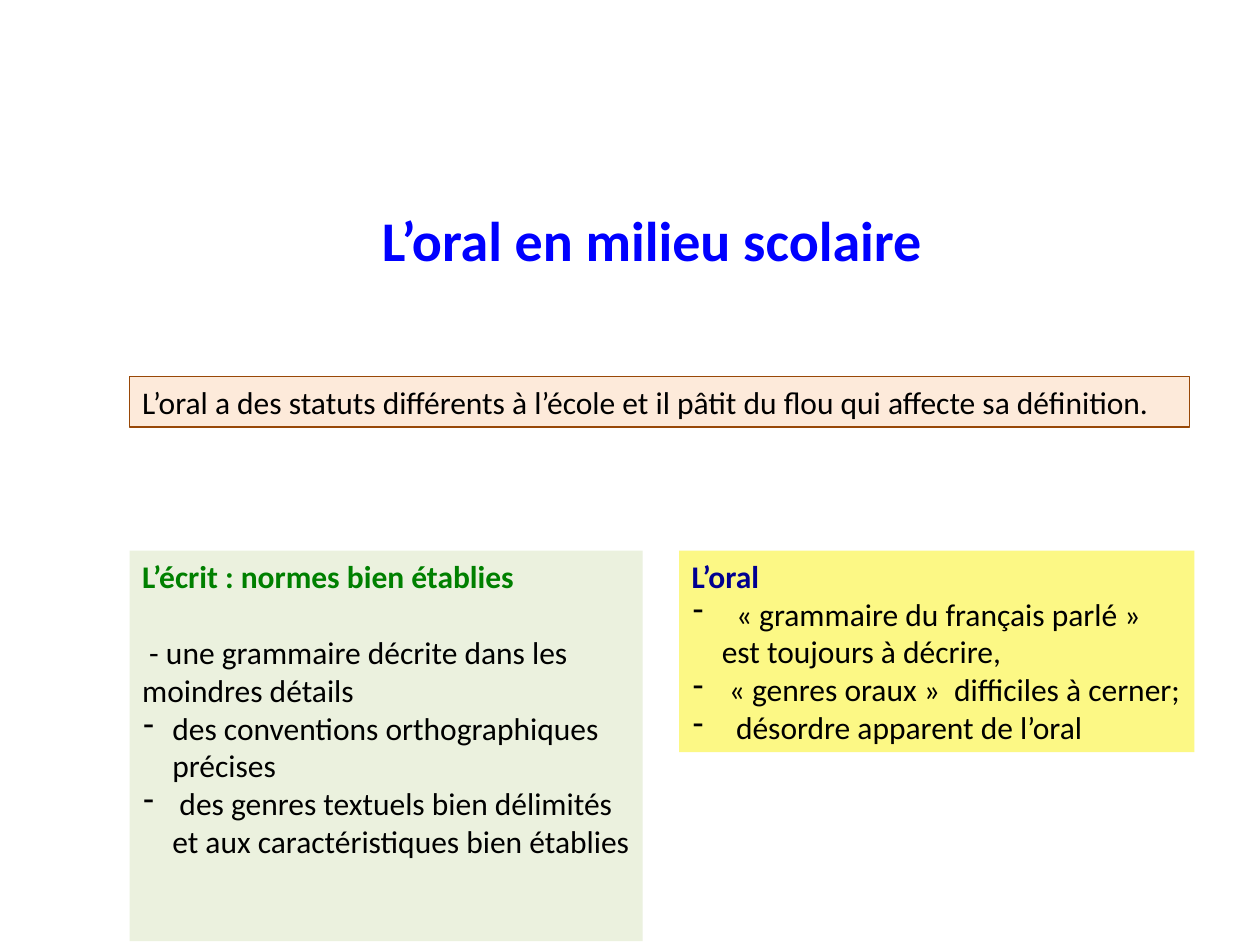
"""Build the slide on the status of spoken French at school."""
from lxml import etree
from pptx import Presentation
from pptx.dml.color import RGBColor
from pptx.enum.shapes import MSO_SHAPE
from pptx.enum.text import MSO_ANCHOR, PP_ALIGN
from pptx.oxml.ns import qn
from pptx.util import Inches, Pt

RECTANGLE = MSO_SHAPE.RECTANGLE
TOP = MSO_ANCHOR.TOP
LEFT, CENTER = PP_ALIGN.LEFT, PP_ALIGN.CENTER

BLACK = RGBColor(0x00, 0x00, 0x00)
BLUE = RGBColor(0x00, 0x00, 0xFF)
NAVY = RGBColor(0x00, 0x00, 0x90)
GREEN = RGBColor(0x00, 0x80, 0x00)
BROWN = RGBColor(0x98, 0x48, 0x07)
PEACH = RGBColor(0xFD, 0xEA, 0xDA)
PALE_GREEN = RGBColor(0xEB, 0xF1, 0xDE)
YELLOW = RGBColor(0xFC, 0xF8, 0x85)

BODY = {"name": "Calibri", "size": Pt(18), "bold": False}
HEADING = {**BODY, "bold": True}
TITLE = {**HEADING, "size": Pt(32)}


def add_dash(paragraph):
    properties = paragraph._p.get_or_add_pPr()
    properties.set("marL", str(Inches(0.24)))
    properties.set("indent", str(Inches(-0.23)))
    color = etree.SubElement(properties, qn("a:buClr"))
    etree.SubElement(color, qn("a:srgbClr"), val=str(BLACK))
    etree.SubElement(properties, qn("a:buChar"), char="-")


def write(frame, lines, align):
    frame.word_wrap = True
    frame.vertical_anchor = TOP
    for index, (text, style, color, dashed, gap) in enumerate(lines):
        paragraph = frame.add_paragraph() if index else frame.paragraphs[0]
        paragraph.alignment = align
        if gap:
            paragraph.space_before = Pt(gap)
        if dashed:
            add_dash(paragraph)
        run = paragraph.add_run()
        run.text = text
        for attribute, value in style.items():
            setattr(run.font, attribute, value)
        run.font.color.rgb = color


presentation = Presentation()
presentation.slide_width = Inches(10)
presentation.slide_height = Inches(7.5)
slide = presentation.slides.add_slide(presentation.slide_layouts[6])

title = slide.shapes.add_textbox(Inches(1.87), Inches(1.58), Inches(6.71), Inches(0.63))
write(title.text_frame, [("L’oral en milieu scolaire ", TITLE, BLUE, False, 0)], CENTER)

statement = [
    ("L’oral a des statuts différents à l’école et il pâtit du flou qui affecte sa définition.",
     BODY, BLACK, False, 0),
]
written = [
    ("L’écrit : normes bien établies", HEADING, GREEN, False, 0),
    (" - une grammaire décrite dans les moindres détails", BODY, BLACK, False, 22),
    ("des conventions orthographiques précises", BODY, BLACK, True, 0),
    (" des genres textuels bien délimités et aux caractéristiques bien établies",
     BODY, BLACK, True, 0),
]
spoken = [
    ("L’oral", HEADING, NAVY, False, 0),
    ("  « grammaire du français parlé » est toujours à décrire,", BODY, BLACK, True, 0),
    (" « genres oraux »  difficiles à cerner;", BODY, BLACK, True, 0),
    ("  désordre apparent de l’oral", BODY, BLACK, True, 0),
]

panels = [
    ((1.03, 2.99, 8.41, 0.4), PEACH, BROWN, statement),
    ((1.03, 4.37, 4.07, 3.1), PALE_GREEN, None, written),
    ((5.39, 4.37, 4.09, 1.6), YELLOW, None, spoken),
]
for bounds, fill, border, lines in panels:
    panel = slide.shapes.add_shape(RECTANGLE, *map(Inches, bounds))
    panel.shadow.inherit = False
    panel.fill.solid()
    panel.fill.fore_color.rgb = fill
    if border:
        panel.line.color.rgb = border
        panel.line.width = Pt(0.75)
    else:
        panel.line.fill.background()
    write(panel.text_frame, lines, LEFT)

presentation.save("out.pptx")
